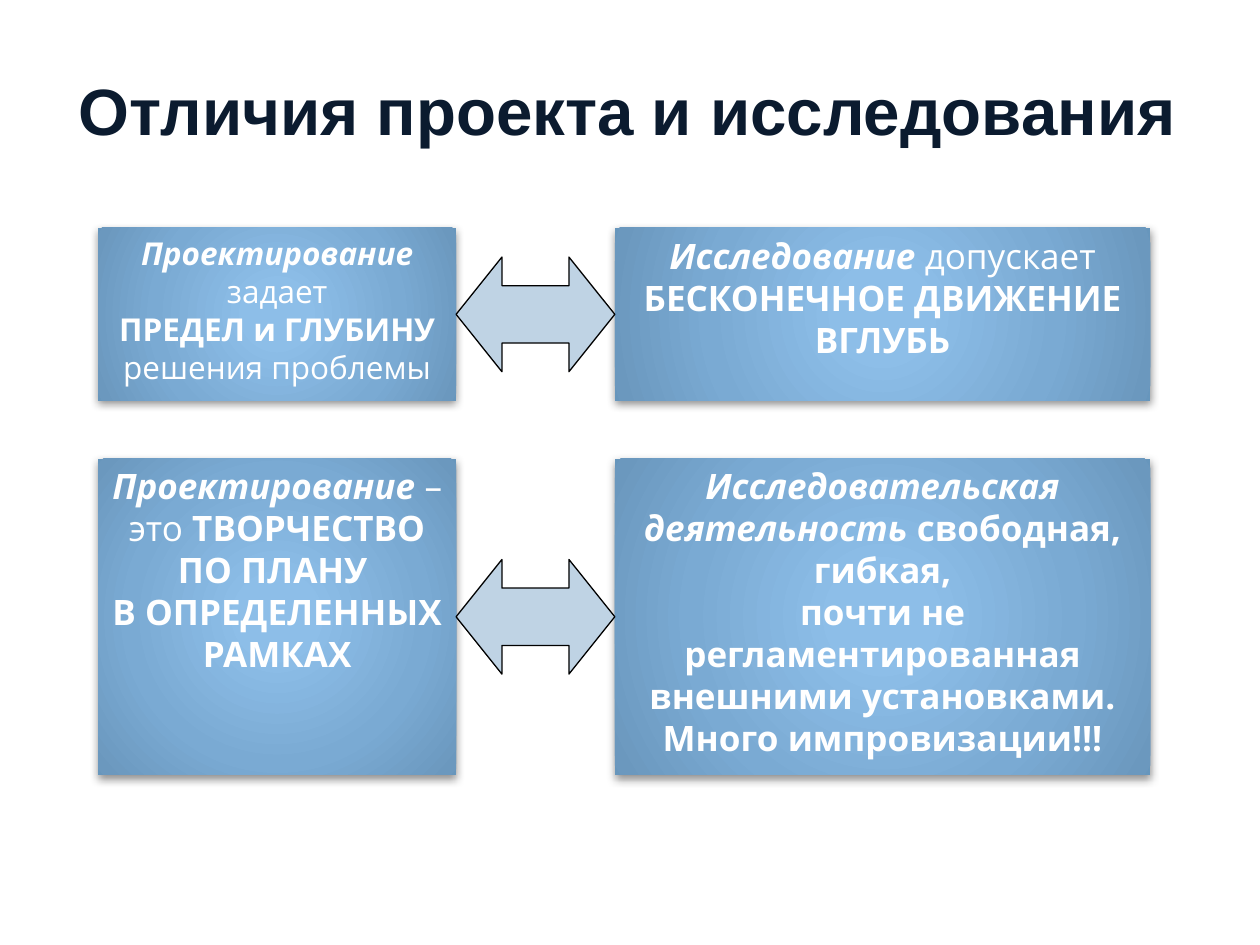
import pptx
import pptx.dml.color
import pptx.enum.shapes
import pptx.enum.text
import pptx.oxml
import pptx.oxml.ns
import pptx.util

Inches = pptx.util.Inches
SHAPES = pptx.enum.shapes.MSO_SHAPE
COLORS = {"title": "0B1B2F", "text": "FFFFFF", "arrow": "BFD3E4", "edge": "000000"}
GLOW = {0: "8DBFE9", 15: "8DBEE8", 62: "7AAAD3", 97: "6B98BE", 100: "6796BC"}

# Run formats
PLAIN = {"bold": False, "italic": False}
STRONG = {"bold": True, "italic": False}
TERM = {"bold": True, "italic": True}


class SlideBuilder:
    """Holds the style and the slide being drawn."""

    def __init__(self, slide):
        self.slide = slide
        self.colors = {key: pptx.dml.color.RGBColor.from_string(value)
                       for key, value in COLORS.items()}

    def fill_text(self, frame, paragraphs, font, size, color):
        frame.word_wrap = True
        for index, runs in enumerate(paragraphs):
            line = frame.paragraphs[0] if index == 0 else frame.add_paragraph()
            line.alignment = pptx.enum.text.PP_ALIGN.CENTER
            for wording, emphasis in runs:
                run = line.add_run()
                run.text = wording
                run.font.color.rgb = self.colors[color]
                look = {"name": font, "size": pptx.util.Pt(size), **emphasis}
                for name, value in look.items():
                    setattr(run.font, name, value)

    def title(self, left, top, width, height, wording):
        box = self.slide.shapes.add_textbox(*map(Inches, (left, top, width, height)))
        frame = box.text_frame
        layout = {"vertical_anchor": pptx.enum.text.MSO_ANCHOR.MIDDLE,
                  "margin_left": 0, "margin_right": 0}
        for name, value in layout.items():
            setattr(frame, name, value)
        self.fill_text(frame, [[(wording, STRONG)]], "Arial", 37.4, "title")

    def shape(self, kind, left, top, width, height):
        shape = self.slide.shapes.add_shape(kind, *map(Inches, (left, top, width, height)))
        shape.shadow.inherit = False
        return shape

    def card(self, left, top, width, height, size, paragraphs):
        card = self.shape(SHAPES.RECTANGLE, left, top, width, height)
        card.line.fill.background()
        properties = card._element.spPr
        namespace = pptx.oxml.ns.nsdecls("a")

        # Radial gradient
        stops = "".join(f'<a:gs pos="{place * 1000}"><a:srgbClr val="{color}"/></a:gs>'
                        for place, color in GLOW.items())
        properties.find(pptx.oxml.ns.qn("a:prstGeom")).addnext(pptx.oxml.parse_xml(
            f'<a:gradFill {namespace} rotWithShape="1"><a:gsLst>{stops}</a:gsLst>'
            '<a:path path="circle"><a:fillToRect l="50000" t="50000" r="50000" b="50000"/>'
            '</a:path></a:gradFill>'))

        # Soft shadow below
        properties.find(pptx.oxml.ns.qn("a:effectLst")).append(pptx.oxml.parse_xml(
            f'<a:outerShdw {namespace} blurRad="{pptx.util.Pt(5)}" dist="{pptx.util.Pt(2)}" '
            'dir="5400000" rotWithShape="0"><a:srgbClr val="000000">'
            '<a:alpha val="43000"/></a:srgbClr></a:outerShdw>'))

        card.text_frame.vertical_anchor = pptx.enum.text.MSO_ANCHOR.TOP
        self.fill_text(card.text_frame, paragraphs, "Open Sans", size, "text")

    def arrow(self, left, top, width, height):
        arrow = self.shape(SHAPES.LEFT_RIGHT_ARROW, left, top, width, height)
        arrow.adjustments[0], arrow.adjustments[1] = 0.5, 0.4
        arrow.fill.solid()
        arrow.fill.fore_color.rgb = self.colors["arrow"]
        arrow.line.color.rgb = self.colors["edge"]
        arrow.line.width = pptx.util.Pt(0.75)


# Each row: top, height, then (text size, paragraphs) for project and research
COMPARISONS = [
    (1.81, 1.37,
     (18, [[("Проектирование ", TERM), ("задает", PLAIN)],
           [("ПРЕДЕЛ и ГЛУБИНУ", STRONG)],
           [("решения проблемы", PLAIN)]]),
     (20, [[("Исследование", TERM), (" допускает", PLAIN)],
           [("БЕСКОНЕЧНОЕ ДВИЖЕНИЕ ВГЛУБЬ", STRONG)]])),
    (3.64, 2.51,
     (20, [[("Проектирование ", TERM), ("– это ", PLAIN), ("ТВОРЧЕСТВО ПО ПЛАНУ ", STRONG)],
           [("В ОПРЕДЕЛЕННЫХ РАМКАХ", STRONG)]]),
     (20, [[("Исследовательская деятельность ", TERM), ("свободная, гибкая,", STRONG)],
           [("почти не регламентированная внешними установками.", STRONG)],
           [("Много импровизации!!!", STRONG)]])),
]
PROJECT_LEFT, PROJECT_WIDTH = 0.78, 2.84
RESEARCH_LEFT, RESEARCH_WIDTH = 4.88, 4.25
ARROW_LEFT = PROJECT_LEFT + PROJECT_WIDTH
ARROW_WIDTH, ARROW_HEIGHT = RESEARCH_LEFT - ARROW_LEFT, 0.91


def main():
    deck = pptx.Presentation()
    deck.slide_width, deck.slide_height = Inches(10), Inches(7.5)
    builder = SlideBuilder(deck.slides.add_slide(deck.slide_layouts[6]))

    # Comparison rows, each arrow centred between its cards
    for top, height, project, research in COMPARISONS:
        builder.card(PROJECT_LEFT, top, PROJECT_WIDTH, height, *project)
        builder.card(RESEARCH_LEFT, top, RESEARCH_WIDTH, height, *research)
        arrow_top = top + (height - ARROW_HEIGHT) / 2
        builder.arrow(ARROW_LEFT, arrow_top, ARROW_WIDTH, ARROW_HEIGHT)

    # Heading
    builder.title(0.51, 0.29, 8.95, 1.15, "Отличия проекта и исследования")
    deck.save("out.pptx")


if __name__ == "__main__":
    main()
